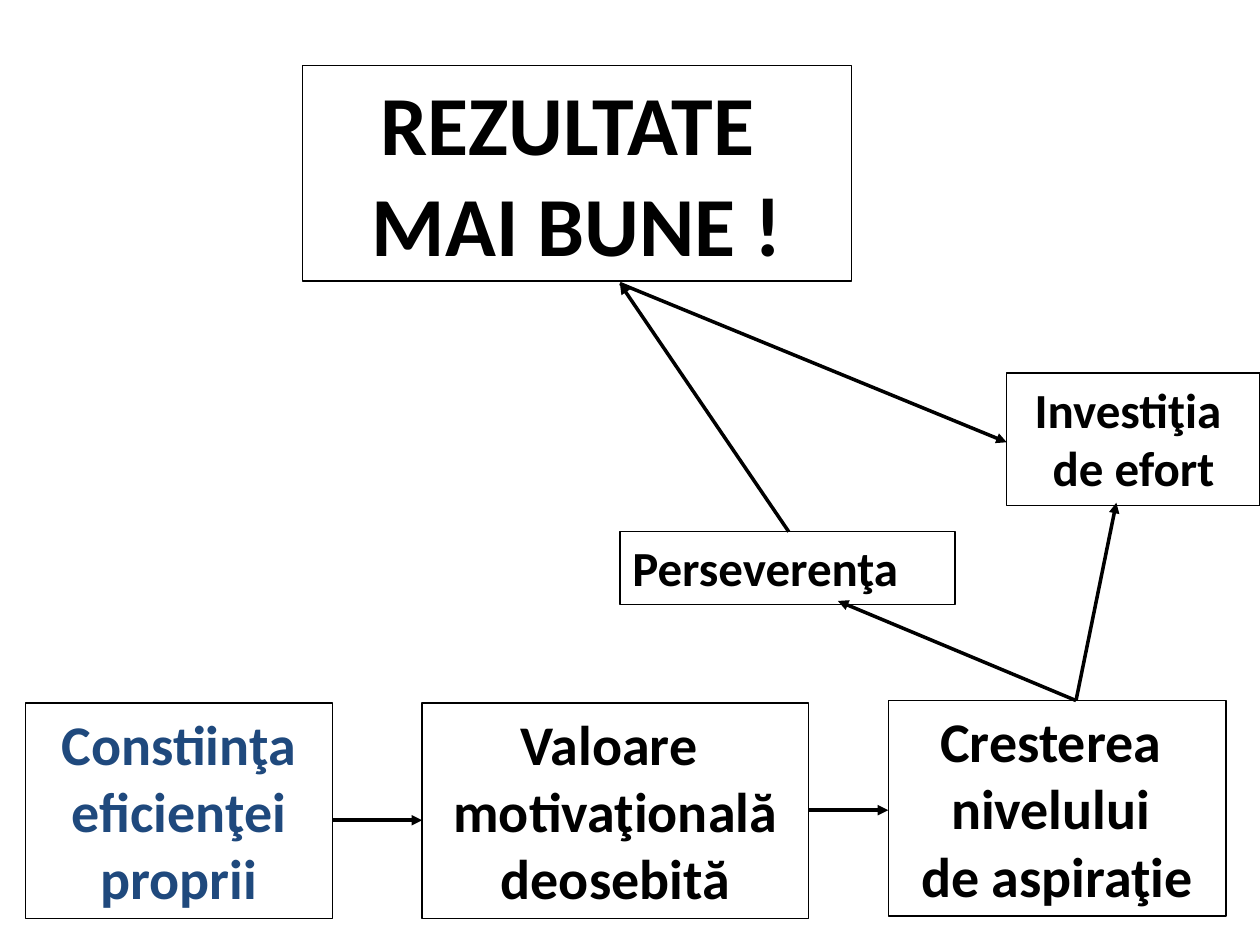
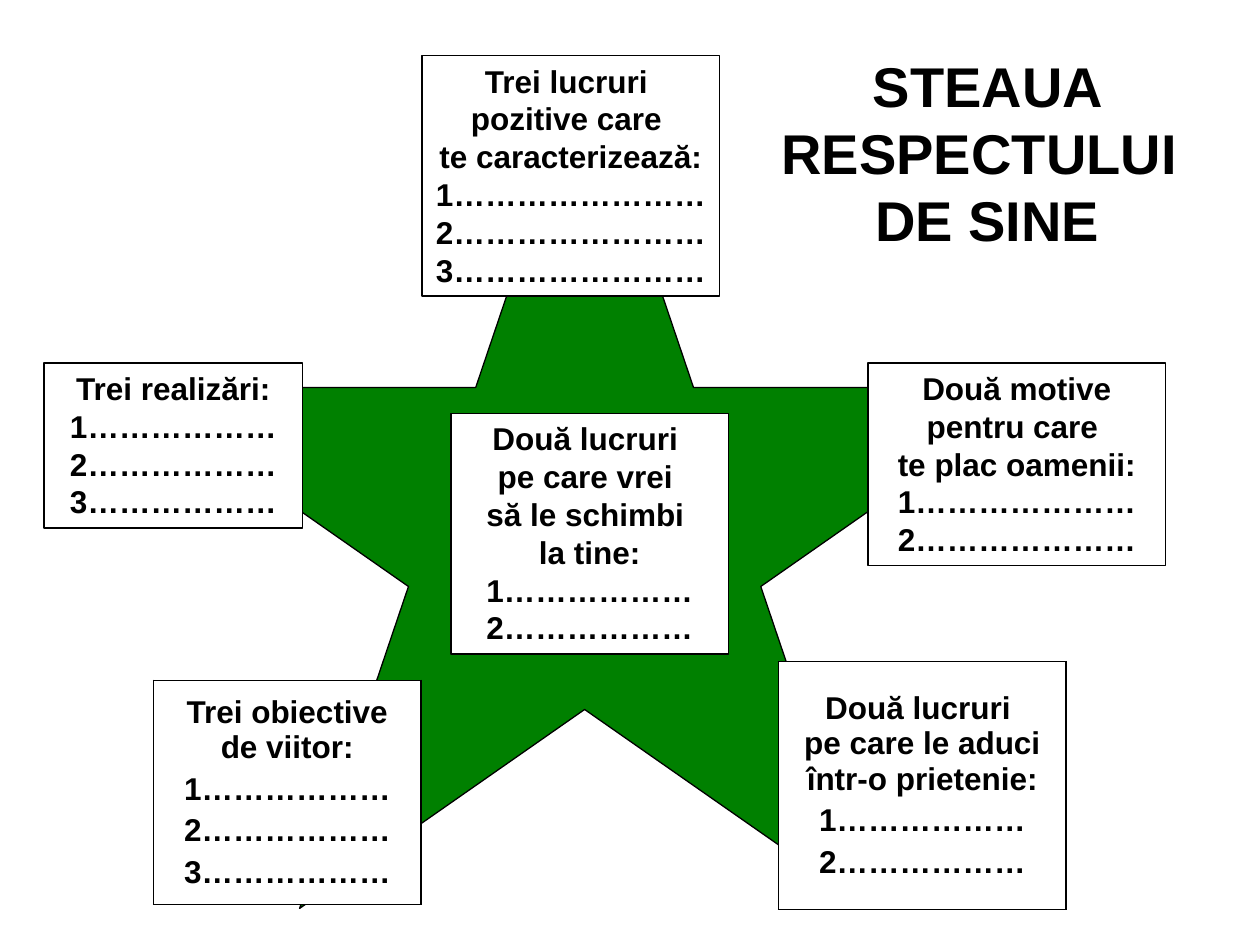
from lxml import etree
from pptx import Presentation
from pptx.dml.color import RGBColor
from pptx.enum.shapes import MSO_CONNECTOR, MSO_SHAPE
from pptx.enum.text import MSO_ANCHOR, MSO_AUTO_SIZE, PP_ALIGN
from pptx.oxml import parse_xml
from pptx.oxml.ns import nsdecls, qn
from pptx.util import Inches, Pt

STRAIGHT = MSO_CONNECTOR.STRAIGHT
RECTANGLE, STAR = MSO_SHAPE.RECTANGLE, MSO_SHAPE.STAR_5_POINT
MIDDLE, TOP = MSO_ANCHOR.MIDDLE, MSO_ANCHOR.TOP
GROW = MSO_AUTO_SIZE.SHAPE_TO_FIT_TEXT
CENTER, LEFT = PP_ALIGN.CENTER, PP_ALIGN.LEFT

BLACK, WHITE, GREEN, NAVY = "000000", "FFFFFF", "008000", "1F497D"


def color(value):
    return RGBColor.from_string(value)


def apply(target, values):
    for name, value in values.items():
        setattr(target, name, value)


def inches(*lengths):
    return [Inches(length) for length in lengths]


def numbered(count, dots):
    return [f"{number}{'…' * dots}" for number in range(1, count + 1)]


class Deck:
    """Holds the shared style and the slide being drawn."""

    def __init__(self):
        self.deck = Presentation()
        apply(self.deck, {"slide_width": Inches(10), "slide_height": Inches(7.5)})
        self.slide = None
        self.font = None
        self.hanging = 0

    def new_slide(self, font, hanging=0):
        self.slide = self.deck.slides.add_slide(self.deck.slide_layouts[6])
        self.font, self.hanging = font, hanging

    def fill_text(self, frame, lines, size, ink=BLACK, align=CENTER, gaps=()):
        for index, line in enumerate(lines):
            paragraph = frame.paragraphs[0] if index == 0 else frame.add_paragraph()
            paragraph.alignment = align
            if self.hanging:
                properties = paragraph._p.get_or_add_pPr()
                properties.set("marL", str(Inches(self.hanging)))
                properties.set("indent", str(-Inches(self.hanging)))
            if line in gaps:
                paragraph.space_before = Pt(size * 0.2)
            run = paragraph.add_run()
            run.text = line
            apply(run.font, {"name": self.font, "size": Pt(size), "bold": True})
            run.font.color.rgb = color(ink)

    def fit(self, frame, wrap):
        apply(frame, {"word_wrap": wrap, "auto_size": GROW, "vertical_anchor": TOP})

    def shape(self, preset, at, fill):
        shape = self.slide.shapes.add_shape(preset, *inches(*at))
        shape.shadow.inherit = False
        shape.fill.solid()
        shape.fill.fore_color.rgb = color(fill)
        shape.line.color.rgb = color(BLACK)
        shape.line.width = Pt(0.75)
        return shape

    def box(self, at, lines, size, wrap=True, **style):
        frame = self.shape(RECTANGLE, at, WHITE).text_frame
        self.fit(frame, wrap)
        self.fill_text(frame, lines, size, **style)

    def title(self, at, lines, size):
        frame = self.slide.shapes.add_textbox(*inches(*at)).text_frame
        self.fit(frame, True)
        self.fill_text(frame, lines, size)

    def arrow(self, start, end):
        arrow = self.slide.shapes.add_connector(STRAIGHT, *inches(*start, *end))
        arrow.line.color.rgb = color(BLACK)
        arrow.line.width = Pt(2)
        properties = arrow._element.spPr
        etree.SubElement(properties.find(qn("a:ln")), qn("a:tailEnd"), type="triangle")
        etree.SubElement(properties, qn("a:effectLst"))

    def card(self, at, heading, answers, size):
        table = self.slide.shapes.add_table(1, 1, *inches(*at)).table
        apply(table, {"first_row": False, "horz_banding": False})
        cell = table.cell(0, 0)
        cell.vertical_anchor = MIDDLE
        cell.fill.solid()
        cell.fill.fore_color.rgb = color(WHITE)
        for index, side in enumerate("LRTB"):
            border = parse_xml(
                f'<a:ln{side} {nsdecls("a")} w="{Pt(1)}"><a:solidFill>'
                f'<a:srgbClr val="{BLACK}"/></a:solidFill></a:ln{side}>')
            cell._tc.get_or_add_tcPr().insert(index, border)
        self.fill_text(cell.text_frame, heading + answers, size, gaps=answers)


def draw_results(deck):
    deck.new_slide("Calibri", hanging=0.38)
    awareness, value, aspiration = (2.24, 6.51), (3.35, 6.51), (8.54, 5.56)
    results = (4.92, 2.25)
    deck.arrow(awareness, value)
    deck.box((0.2, 5.58, 2.44, 1.71), ["Constiinţa", "eficienţei", "proprii"], 32, ink=NAVY)
    for at, lines, size, align in [
        ((3.35, 5.58, 3.07, 1.71), ["Valoare ", "motivaţională", "deosebită"], 32, CENTER),
        ((7.05, 5.56, 2.68, 1.71), ["Cresterea ", "nivelului ", "de aspiraţie"], 32, CENTER),
        ((4.92, 4.22, 2.66, 0.58), ["Perseverenţa"], 28, LEFT),
        ((7.99, 2.96, 2.01, 1.05), ["Investiţia ", "de efort"], 28, CENTER),
        ((2.4, 0.52, 4.36, 1.71), ["REZULTATE ", "MAI BUNE !"], 48, CENTER),
    ]:
        deck.box(at, lines, size, wrap=False, align=align)
    for start, end in [
        ((6.42, 6.43), (7.05, 6.43)),
        (aspiration, (6.65, 4.77)),
        (aspiration, (8.86, 3.99)),
        (results, (7.99, 3.51)),
        ((6.26, 4.22), results),
    ]:
        deck.arrow(start, end)


def draw_star(deck):
    deck.new_slide("Arial")
    deck.shape(STAR, (0.98, 0.52, 7.32, 6.69), GREEN)
    deck.title((6.1, 0.36, 3.47, 1.7), ["STEAUA RESPECTULUI ", "DE SINE"], 32)
    for at, question, answers in [
        ((3.35, 0.44, 2.36, 1.91),
         ["Trei lucruri ", "pozitive care ", "te caracterizează:"], numbered(3, 8)),
        ((0.35, 2.88, 2.05, 1.31), ["Trei realizări:"], numbered(3, 6)),
        ((6.89, 2.88, 2.36, 1.61),
         ["Două motive pentru care ", "te plac oamenii:"], numbered(2, 7)),
        ((3.58, 3.28, 2.2, 1.91),
         ["Două lucruri ", "pe care vrei ", "să le schimbi ", "la tine:"], numbered(2, 6)),
    ]:
        deck.box(at, question + answers, 18)
    deck.card((1.22, 5.4, 2.12, 1.78), ["Trei obiective", "de viitor:"], numbered(3, 6), 18)
    deck.card((6.18, 5.25, 2.28, 1.97),
              ["Două lucruri ", "pe care le aduci", "într-o prietenie:"], numbered(2, 6), 18)


def main():
    deck = Deck()
    draw_results(deck)
    draw_star(deck)
    deck.deck.save("out.pptx")


if __name__ == "__main__":
    main()
